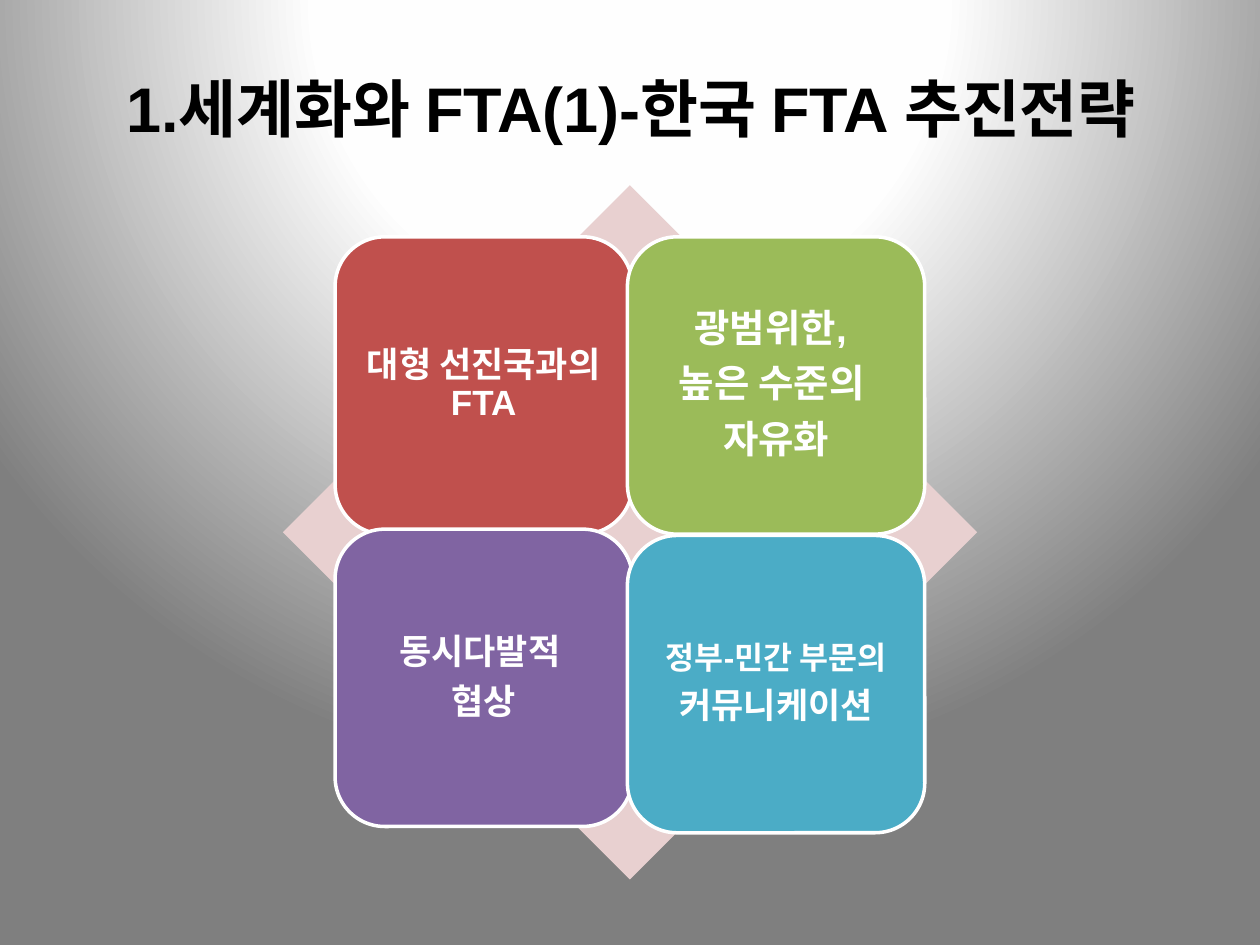
from pptx import Presentation
from pptx.dml.color import RGBColor
from pptx.enum.shapes import MSO_SHAPE
from pptx.enum.text import MSO_ANCHOR, PP_ALIGN
from pptx.oxml import parse_xml
from pptx.oxml.ns import nsdecls
from pptx.util import Inches, Pt

# Content: title, then cards as (colour, left, top, lines of (text, size))
TITLE = "1.세계화와 FTA(1)-한국 FTA 추진전략"
CARDS = [
    ("red", 0, 0, [("대형 선진국과의 FTA", "medium")]),
    ("green", 1, 0, [("광범위한, ", "large"), ("높은 수준의 ", "large"),
                     ("자유화", "large")]),
    ("purple", 0, 1, [("동시다발적 ", "medium"), ("협상", "medium")]),
    ("blue", 1, 1, [("정부-민간 부문의", "small"), ("커뮤니케이션", "medium")]),
]

THEME = {
    "font": "Arial",
    "colors": {"red": "C0504D", "green": "9BBB59", "purple": "8064A2",
               "blue": "4BACC6", "diamond": "E8D0D0", "white": "FFFFFF",
               "black": "000000"},
    "sizes": {"title": 36, "large": 22, "medium": 20, "small": 18},
    "background": [(0, "FFFFFF"), (40, "FEFEFE"), (100, "7F7F7F")],
}

# Layout in inches: cards sit on a 2 x 2 grid centred on the diamond
WIDTH, HEIGHT = 10, 7.5
DIAMOND = 5.51
DIAMOND_TOP = 1.47
CARD = 2.36
PITCH = 2.32
GRID_LEFT = (WIDTH - PITCH - CARD) / 2
GRID_TOP = 1.88
RIGHT_COLUMN_DROP = 0.05  # the lower right card sits slightly lower


def color(name):
    return RGBColor.from_string(THEME["colors"][name])


def set_background(slide):
    stops = "".join(
        f'<a:gs pos="{position * 1000}"><a:srgbClr val="{value}"/></a:gs>'
        for position, value in THEME["background"])
    background = parse_xml(
        f'<p:bg {nsdecls("p", "a")}><p:bgPr><a:gradFill rotWithShape="1">'
        f'<a:gsLst>{stops}</a:gsLst><a:path path="circle">'
        '<a:fillToRect l="50000" t="-80000" r="50000" b="180000"/>'
        '</a:path></a:gradFill><a:effectLst/></p:bgPr></p:bg>')
    slide.shapes[0]._element.getparent().addprevious(background)


def write_lines(shape, lines, color_name, inset):
    frame = shape.text_frame
    frame.word_wrap = True
    frame.vertical_anchor = MSO_ANCHOR.MIDDLE
    frame.margin_left = frame.margin_right = Inches(inset)
    frame.margin_top = frame.margin_bottom = Inches(inset)
    frame.text = "\n".join(text for text, _ in lines)
    for paragraph, (_, size) in zip(frame.paragraphs, lines):
        paragraph.alignment = PP_ALIGN.CENTER
        font = paragraph.runs[0].font
        font.name = THEME["font"]
        font.size = Pt(THEME["sizes"][size])
        font.bold = True
        font.color.rgb = color(color_name)


def add_block(slide, kind, left, top, size, fill):
    shape = slide.shapes.add_shape(
        kind, Inches(left), Inches(top), Inches(size), Inches(size))
    shape.shadow.inherit = False
    shape.fill.solid()
    shape.fill.fore_color.rgb = color(fill)
    shape.line.fill.background()
    return shape


def add_card(slide, fill, column, row, lines):
    top = GRID_TOP + row * PITCH + column * row * RIGHT_COLUMN_DROP
    card = add_block(slide, MSO_SHAPE.ROUNDED_RECTANGLE,
                     GRID_LEFT + column * PITCH, top, CARD, fill)
    card.line.color.rgb = color("white")
    card.line.width = Pt(2)
    write_lines(card, lines, "white", 0.07)
    for paragraph, (_, size) in zip(card.text_frame.paragraphs, lines):
        paragraph.line_spacing = 0.9
        paragraph.space_after = Pt(round(THEME["sizes"][size] * 0.35, 1))


def main():
    presentation = Presentation()
    presentation.slide_width = Inches(WIDTH)
    presentation.slide_height = Inches(HEIGHT)
    slide = presentation.slides.add_slide(presentation.slide_layouts[6])

    # Title
    title = slide.shapes.add_textbox(
        Inches(0.51), Inches(0.36), Inches(9), Inches(0.99))
    write_lines(title, [(TITLE, "title")], "black", 0.05)
    set_background(slide)

    # Diamond behind the four cards
    add_block(slide, MSO_SHAPE.DIAMOND, (WIDTH - DIAMOND) / 2, DIAMOND_TOP,
              DIAMOND, "diamond")
    for card in CARDS:
        add_card(slide, *card)

    presentation.save("out.pptx")


if __name__ == "__main__":
    main()
